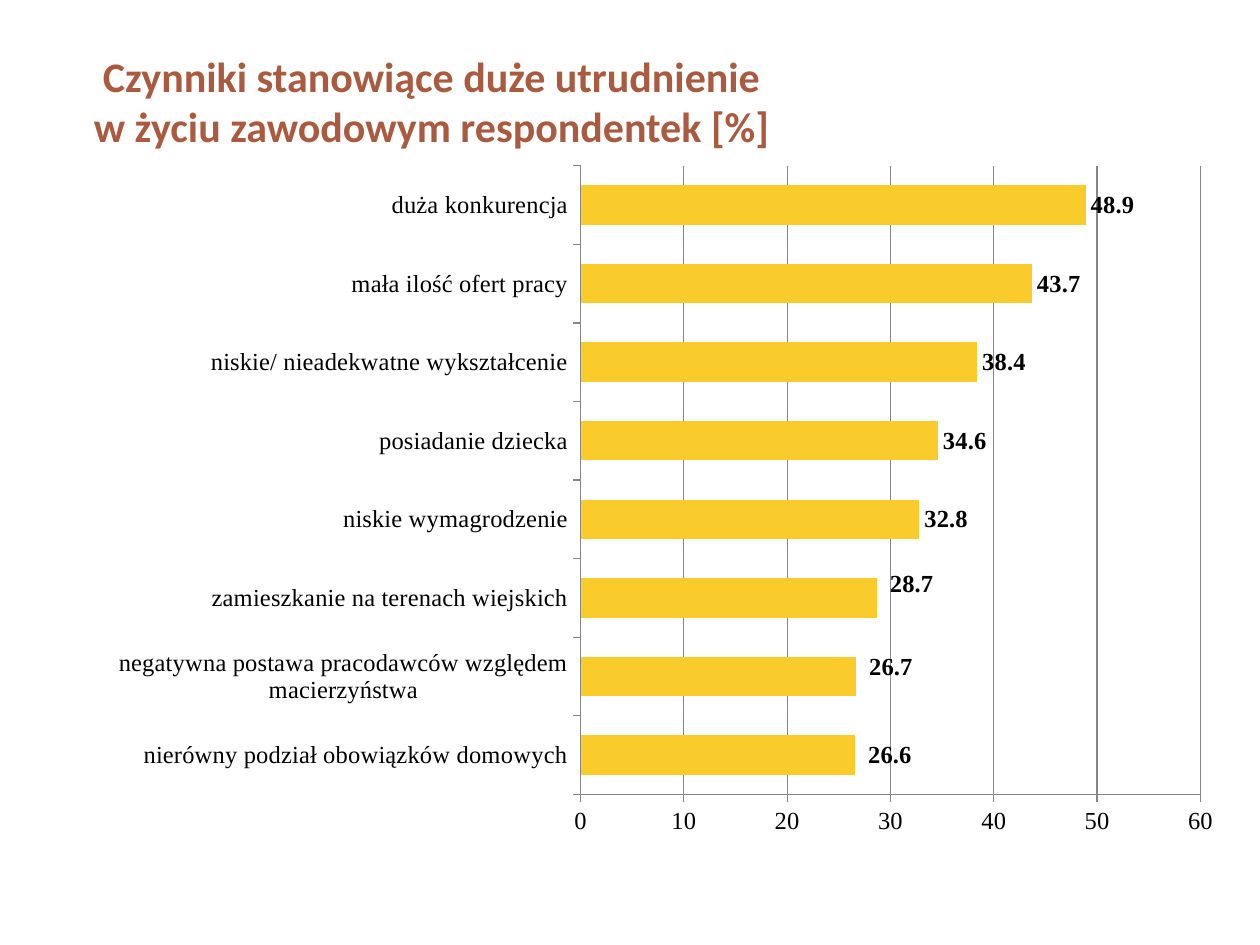
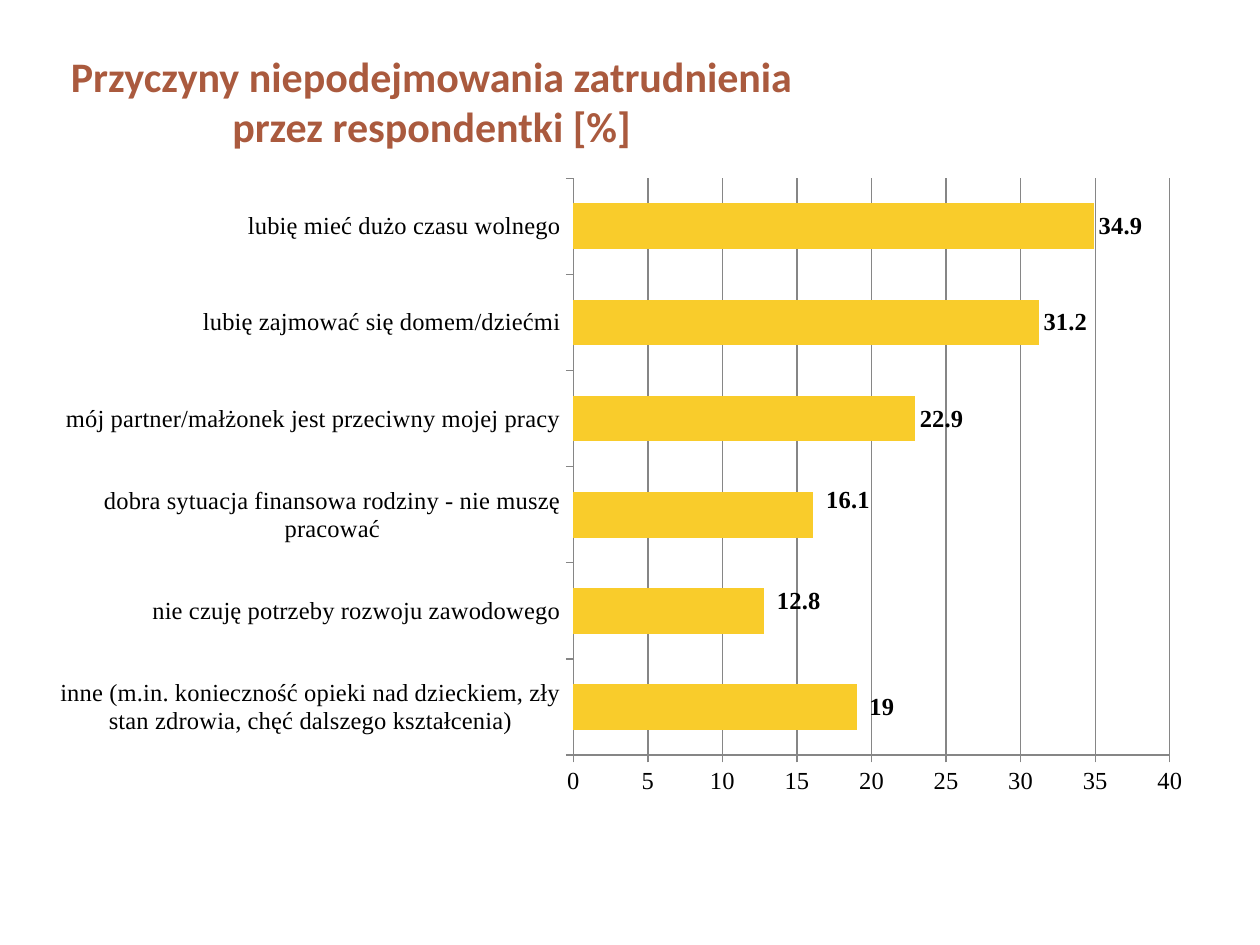
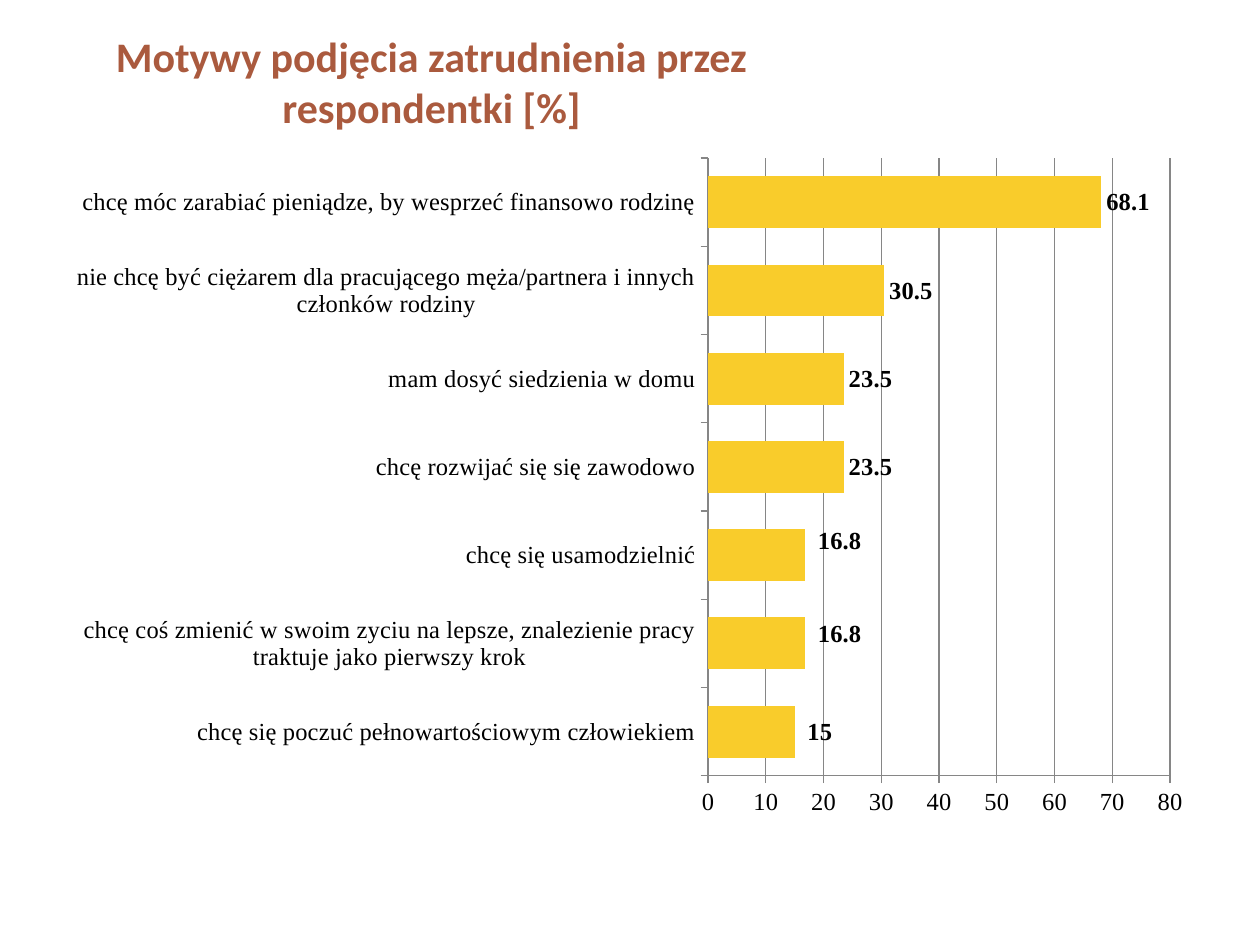
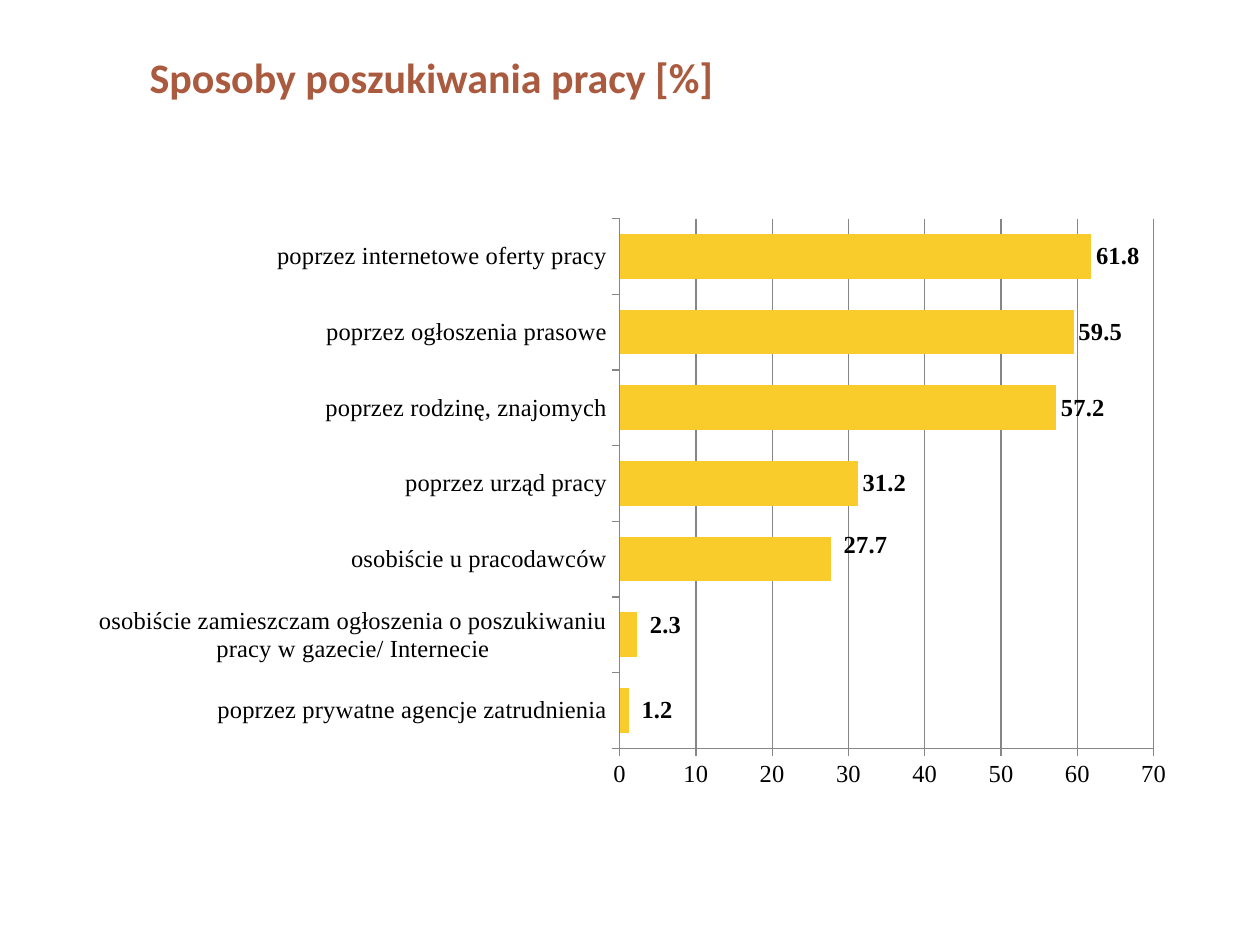
from dataclasses import dataclass

from pptx import Presentation
from pptx.chart.data import CategoryChartData
from pptx.dml.color import RGBColor
from pptx.enum.chart import XL_CHART_TYPE as ChartType
from pptx.enum.chart import XL_LABEL_POSITION as LabelPosition
from pptx.enum.chart import XL_TICK_MARK as TickMark
from pptx.enum.text import MSO_ANCHOR as Anchor
from pptx.enum.text import PP_ALIGN as Align
from pptx.oxml import parse_xml
from pptx.oxml.ns import nsdecls, qn
from pptx.util import Pt

# Shared style
RUST = RGBColor(0xAA, 0x5A, 0x3E)
YELLOW = RGBColor(0xF9, 0xCC, 0x2B)
BLACK = RGBColor(0, 0, 0)
GRAY = RGBColor(0x86, 0x86, 0x86)
TITLE_FONT = "Calibri"
CHART_FONT = "Times New Roman"
TITLE_LEFT, TITLE_TOP, TITLE_WIDTH = 8.64, 15.12, 475.92

# Shifts in points of the labels on the three lowest bars
LABEL_SHIFTS = [(4.5, 0), (4.5, -5.7), (4.5, -8.3)]


@dataclass
class Survey:
    title_lines: list
    title_height: float
    box: tuple      # chart on the slide: left, top, width, height
    plot: tuple     # bars within the chart box: left, top, width, height
    gap: int
    axis_max: int
    axis_step: int
    answers: list   # from the lowest bar to the highest
    label_format: str = "General"


SURVEYS = [
    Survey(
        ["Czynniki stanowiące duże utrudnienie",
         "w życiu zawodowym respondentek [%]"],
        84.96, (8.64, 94.32, 691.92, 390.96), (323.1, 0, 354.3, 359.7),
        100, 60, 10,
        [("nierówny podział obowiązków domowych", 26.6),
         ("negatywna postawa pracodawców względem macierzyństwa", 26.7),
         ("zamieszkanie na terenach wiejskich", 28.7),
         ("niskie wymagrodzenie", 32.8),
         ("posiadanie dziecka", 34.6),
         ("niskie/ nieadekwatne wykształcenie", 38.4),
         ("mała ilość ofert pracy", 43.7),
         ("duża konkurencja", 48.9)],
        "0.0"),
    Survey(
        ["Przyczyny niepodejmowania zatrudnienia przez respondentki [%]"],
        84.96, (20.16, 94.32, 680.4, 380.16), (307.5, 7.6, 340.9, 329.6),
        110, 40, 5,
        [("inne (m.in. konieczność opieki nad dzieckiem, zły stan zdrowia, "
          "chęć dalszego kształcenia)", 19),
         ("nie czuję potrzeby rozwoju zawodowego", 12.8),
         ("dobra sytuacja finansowa rodziny - nie muszę pracować", 16.1),
         ("mój partner/małżonek jest przeciwny mojej pracy", 22.9),
         ("lubię zajmować się domem/dziećmi", 31.2),
         ("lubię mieć dużo czasu wolnego", 34.9)]),
    Survey(
        ["Motywy podjęcia zatrudnienia przez respondentki [%]"],
        62.64, (30.96, 82.8, 657.36, 390.96), (373.7, 7.6, 264, 353),
        70, 80, 10,
        [("chcę się poczuć pełnowartościowym człowiekiem", 15),
         ("chcę coś zmienić w swoim zyciu na lepsze, znalezienie pracy "
          "traktuje jako pierwszy krok", 16.8),
         ("chcę się usamodzielnić", 16.8),
         ("chcę rozwijać się się zawodowo", 23.5),
         ("mam dosyć siedzienia w domu", 23.5),
         ("nie chcę być ciężarem dla pracującego męża/partnera i innych "
          "członków rodziny", 30.5),
         ("chcę móc zarabiać pieniądze, by wesprzeć finansowo rodzinę", 68.1)]),
    Survey(
        ["Sposoby poszukiwania pracy [%]"],
        56.88, (42.48, 116.64, 646.56, 345.6), (311.6, 8.3, 305.2, 302.7),
        70, 70, 10,
        [("poprzez prywatne agencje zatrudnienia", 1.2),
         ("osobiście zamieszczam ogłoszenia o poszukiwaniu pracy w gazecie/ "
          "Internecie", 2.3),
         ("osobiście u pracodawców", 27.7),
         ("poprzez urząd pracy", 31.2),
         ("poprzez rodzinę, znajomych", 57.2),
         ("poprzez ogłoszenia prasowe", 59.5),
         ("poprzez internetowe oferty pracy", 61.8)]),
]


def style_font(font, name, size, color, bold=False):
    font.name = name
    font.size = Pt(size)
    font.color.rgb = color
    font.bold = bold


def manual_layout(settings):
    """Layout element from (tag, value) pairs, in schema order."""
    parts = "".join(f'<c:{tag} val="{value}"/>' for tag, value in settings)
    return parse_xml(f'<c:layout {nsdecls("c")}><c:manualLayout>{parts}'
                     "</c:manualLayout></c:layout>")


def add_title(slide, lines, height):
    heading = slide.shapes.add_textbox(
        Pt(TITLE_LEFT), Pt(TITLE_TOP), Pt(TITLE_WIDTH), Pt(height))
    frame = heading.text_frame
    frame.word_wrap = True
    frame.vertical_anchor = Anchor.MIDDLE
    paragraph = frame.paragraphs[0]
    paragraph.alignment = Align.CENTER
    for index, line in enumerate(lines):
        if index:
            paragraph.add_line_break()
        run = paragraph.add_run()
        run.text = line
        style_font(run.font, TITLE_FONT, 24, RUST, bold=True)


def place_plot(chart, survey):
    width, height = survey.box[2:]
    sizes = (width, height, width, height)
    fractions = [part / whole for part, whole in zip(survey.plot, sizes)]
    plot_area = chart.element.find(".//" + qn("c:plotArea"))
    for old in plot_area.findall(qn("c:layout")):
        plot_area.remove(old)
    plot_area.insert(0, manual_layout(
        [("layoutTarget", "inner"), ("xMode", "edge"), ("yMode", "edge"),
         *zip("xywh", fractions)]))


def style_axes(chart, survey):
    for axis in (chart.category_axis, chart.value_axis):
        axis.major_tick_mark = TickMark.OUTSIDE
        axis.minor_tick_mark = TickMark.NONE
        axis.format.line.color.rgb = GRAY
        axis.format.line.width = Pt(0.75)
        style_font(axis.tick_labels.font, CHART_FONT, 14, BLACK)
    chart.category_axis.has_major_gridlines = False
    values = chart.value_axis
    values.minimum_scale = 0
    values.maximum_scale = survey.axis_max
    values.major_unit = survey.axis_step
    values.has_major_gridlines = True
    values.major_gridlines.format.line.color.rgb = GRAY
    values.major_gridlines.format.line.width = Pt(0.75)
    values.tick_labels.number_format = "#,##0"
    values.tick_labels.number_format_is_linked = False


def label_bars(series, survey):
    labels = series.data_labels
    labels.show_value = True
    labels.number_format = survey.label_format
    labels.number_format_is_linked = False
    labels.position = LabelPosition.OUTSIDE_END
    style_font(labels.font, CHART_FONT, 14, BLACK, bold=True)
    # Nudge the labels of the lowest bars
    width, height = survey.box[2:]
    for index, (right, down) in enumerate(LABEL_SHIFTS):
        label = series.points[index].data_label
        style_font(label.font, CHART_FONT, 14, BLACK, bold=True)
        label.position = LabelPosition.OUTSIDE_END
    for element, (right, down) in zip(
            labels._element.findall(qn("c:dLbl")), LABEL_SHIFTS):
        element.insert(1, manual_layout(
            [("x", right / width), ("y", down / height)]))


def add_bars(slide, survey):
    data = CategoryChartData()
    data.categories = [answer for answer, share in survey.answers]
    data.add_series("Series 1", [share for answer, share in survey.answers])
    chart = slide.shapes.add_chart(
        ChartType.BAR_CLUSTERED, *map(Pt, survey.box), data).chart
    chart.has_legend = False
    chart.has_title = False
    style_font(chart.font, CHART_FONT, 14, BLACK)
    style_axes(chart, survey)
    place_plot(chart, survey)

    plot = chart.plots[0]
    plot.gap_width = survey.gap
    plot.vary_by_categories = False
    series = plot.series[0]
    series.format.fill.solid()
    series.format.fill.fore_color.rgb = YELLOW
    label_bars(series, survey)


def main():
    deck = Presentation()
    deck.slide_width, deck.slide_height = Pt(720), Pt(540)
    blank = deck.slide_layouts[6]
    for survey in SURVEYS:
        slide = deck.slides.add_slide(blank)
        add_title(slide, survey.title_lines, survey.title_height)
        add_bars(slide, survey)
    deck.save("out.pptx")


if __name__ == "__main__":
    main()
